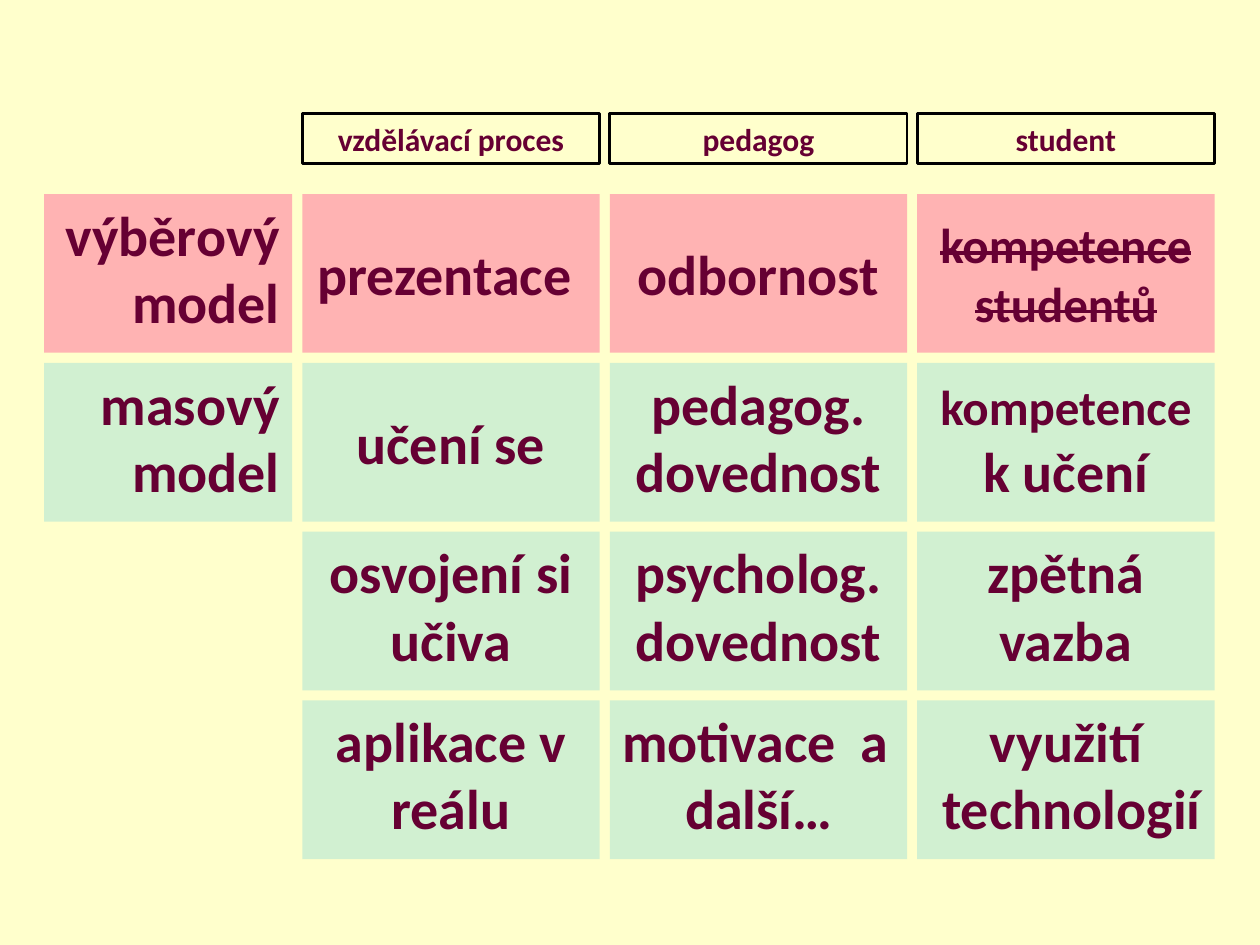
from pptx import Presentation
from pptx.dml.color import RGBColor
from pptx.enum.shapes import MSO_SHAPE
from pptx.enum.text import MSO_ANCHOR, PP_ALIGN
from pptx.util import Inches, Pt

RECTANGLE = MSO_SHAPE.RECTANGLE
TOP, MIDDLE = MSO_ANCHOR.TOP, MSO_ANCHOR.MIDDLE
LEFT, CENTER, RIGHT = PP_ALIGN.LEFT, PP_ALIGN.CENTER, PP_ALIGN.RIGHT

CREAM = RGBColor(0xFF, 0xFF, 0xCC)
PINK = RGBColor(0xFF, 0xB3, 0xB3)
GREEN = RGBColor(0xD1, 0xF0, 0xD1)
WINE = RGBColor(0x66, 0x00, 0x33)
BLACK = RGBColor(0, 0, 0)

HEADERS = ["vzdělávací proces", "pedagog", "student"]
MODELS = [("výběrový model", PINK), ("masový model", GREEN)]
ROW_FILLS = [PINK, GREEN, GREEN, GREEN]
# Each cell: runs of (text, size), then the settings that differ from the default
CELLS = [
    [([("prezentace ", 32)], {"anchor": MIDDLE, "hanging": 0.5}),
     ([("odbornost", 32)], {"anchor": MIDDLE, "hanging": 0.5}),
     ([("kompetence studentů", 28)], {"anchor": MIDDLE, "strike": True})],
    [([("učení se", 32)], {"anchor": MIDDLE, "hanging": 0.5}),
     ([("pedagog. dovednost", 32)], {}),
     ([("kompetence", 28), (" k učení", 32)], {})],
    [([("osvojení si učiva", 32)], {}),
     ([("psycholog. dovednost", 32)], {}),
     ([("zpětná vazba", 32)], {})],
    [([("aplikace v reálu", 32)], {}),
     ([("motivace  a další…", 32)], {"align": LEFT, "hanging": 0.5}),
     ([("využití technologií", 32)], {"hanging": 0.09})],
]

GAP = 0.08
MODEL_LEFT, MODEL_WIDTH = 0.35, 1.97
CELL_LEFT, CELL_WIDTH = MODEL_LEFT + MODEL_WIDTH + GAP, 2.36
CELL_TOP, CELL_HEIGHT = 1.54, 1.26
HEADER_TOP, HEADER_HEIGHT = 0.9, 0.4


def column_left(column):
    return CELL_LEFT + column * (CELL_WIDTH + GAP)


def row_top(row):
    return CELL_TOP + row * (CELL_HEIGHT + GAP)


def add_box(page, place, runs, fill=None, anchor=TOP, align=CENTER,
            hanging=0, strike=False):
    """Add a text rectangle; without a fill it gets a black outline."""
    box = page.shapes.add_shape(RECTANGLE, *(Inches(value) for value in place))
    box.shadow.inherit = False
    if fill is None:
        box.fill.background()
        box.line.color.rgb = BLACK
        box.line.width = Pt(1.5)
    else:
        box.fill.solid()
        box.fill.fore_color.rgb = fill
        box.line.fill.background()
    frame = box.text_frame
    frame.word_wrap = True
    frame.vertical_anchor = anchor
    para = frame.paragraphs[0]
    para.alignment = align
    if hanging:
        properties = para._p.get_or_add_pPr()
        properties.set("marL", str(Inches(hanging)))
        properties.set("indent", str(-Inches(hanging)))
    for text, size in runs:
        span = para.add_run()
        span.text = text
        span.font.name = "Calibri"
        span.font.size = Pt(size)
        span.font.bold = True
        span.font.color.rgb = WINE
        if strike:
            span.font._element.set("strike", "sngStrike")


def main():
    deck = Presentation()
    deck.slide_width, deck.slide_height = Inches(10), Inches(7.5)
    page = deck.slides.add_slide(deck.slide_layouts[6])
    page.background.fill.solid()
    page.background.fill.fore_color.rgb = CREAM

    for column, header in enumerate(HEADERS):
        place = (column_left(column), HEADER_TOP, CELL_WIDTH, HEADER_HEIGHT)
        add_box(page, place, [(header, 18)], hanging=0.5)
    for row, (model, fill) in enumerate(MODELS):
        place = (MODEL_LEFT, row_top(row), MODEL_WIDTH, CELL_HEIGHT)
        add_box(page, place, [(model, 32)], fill, align=RIGHT, hanging=0.5)
    for row, (cells, fill) in enumerate(zip(CELLS, ROW_FILLS)):
        for column, (runs, settings) in enumerate(cells):
            place = (column_left(column), row_top(row), CELL_WIDTH, CELL_HEIGHT)
            add_box(page, place, runs, fill, **settings)

    deck.save("out.pptx")


if __name__ == "__main__":
    main()
